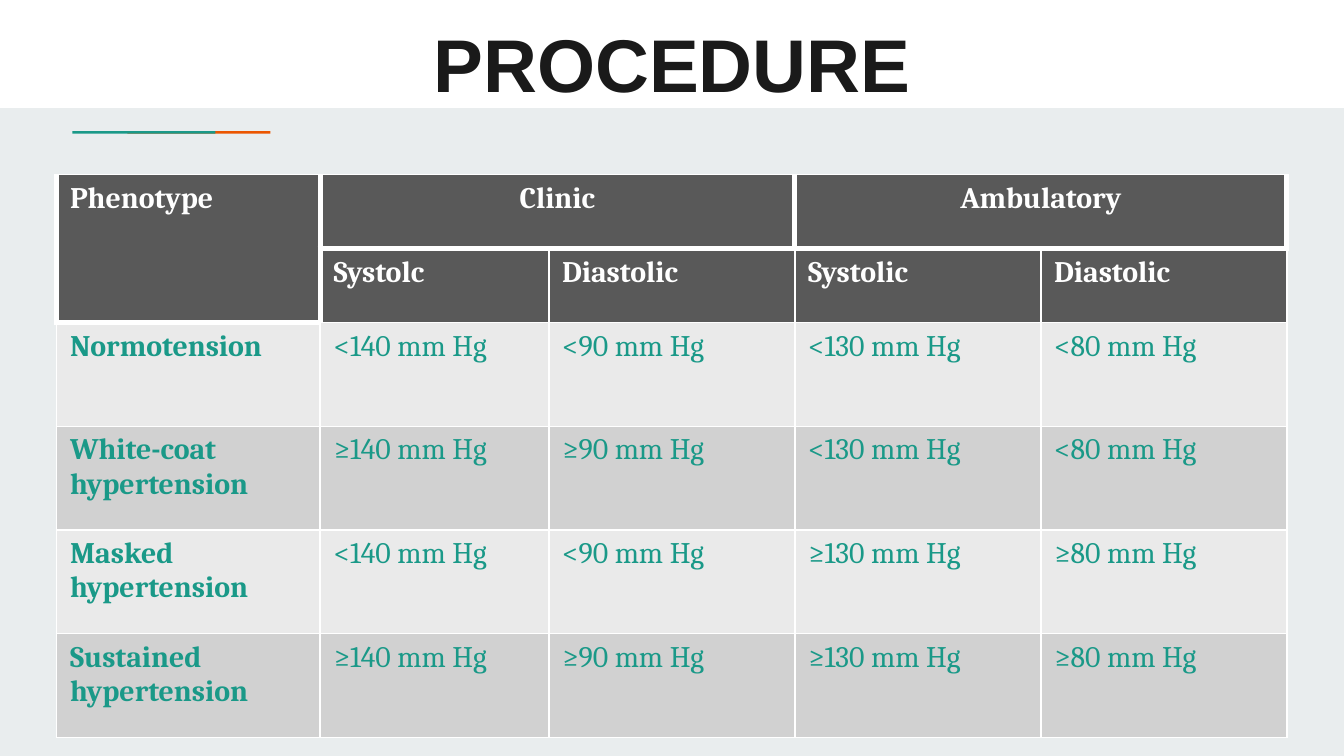
from dataclasses import dataclass

from pptx import Presentation
from pptx.dml.color import RGBColor as RGB
from pptx.enum.shapes import MSO_SHAPE as Kind
from pptx.enum.text import MSO_ANCHOR as Anchor, PP_ALIGN as Align
from pptx.oxml import parse_xml
from pptx.oxml.ns import nsdecls
from pptx.util import Cm, Pt


@dataclass(frozen=True)
class Theme:
    back: str = "E9EDEE"
    white: str = "FFFFFF"
    ink: str = "1A1A1A"
    teal: str = "1A9988"
    orange: str = "EB5600"
    head: str = "595959"
    bands: tuple = ("EAEAEA", "D1D1D1")
    title: int = 40
    cell: int = 16


theme = Theme()


def style(para, color, **form):
    for name, value in form.items():
        setattr(para.font, name, value)
    para.font.color.rgb = RGB.from_string(color)


def edge(cell, sides, width):
    for spot, side in enumerate(sides):
        line = parse_xml(
            f'<a:ln{side} {nsdecls("a")} w="{Pt(width)}"><a:solidFill>'
            f'<a:srgbClr val="{theme.white}"/></a:solidFill></a:ln{side}>')
        cell._tc.get_or_add_tcPr().insert(spot, line)


deck = Presentation()
deck.slide_width, deck.slide_height = Cm(25.4), Cm(14.29)
slide = deck.slides.add_slide(deck.slide_layouts[5])
slide.background.fill.solid()
slide.background.fill.fore_color.rgb = RGB.from_string(theme.back)

# Title band and accent bars
bars = [
    (0, 0, 25.4, 2.04, theme.white),
    (2.41, 2.48, 2.7, 0.05, theme.orange),
    (1.37, 2.48, 2.7, 0.05, theme.teal),
]
for *box, color in bars:
    bar = slide.shapes.add_shape(Kind.RECTANGLE, *map(Cm, box))
    bar.shadow.inherit = False
    bar.fill.solid()
    bar.fill.fore_color.rgb = RGB.from_string(color)
    bar.line.fill.background()

# Title, brought in front of the band
title = slide.shapes.title
slide.shapes._spTree.append(title._element)
place = dict(left=0.8, top=0, width=21.36, height=2.29)
place["left"] = (25.4 - place["width"]) / 2
for name, value in place.items():
    setattr(title, name, Cm(value))
frame = title.text_frame
frame.text = "PROCEDURE"
frame.vertical_anchor = Anchor.BOTTOM
for side in ("left", "right", "top", "bottom"):
    setattr(frame, f"margin_{side}", Cm(0.25))
frame.paragraphs[0].alignment = Align.CENTER
style(frame.paragraphs[0], theme.ink, name="Arial", size=Pt(theme.title), bold=True)

# Table of phenotypes
rows = [
    ("Phenotype", "Clinic", "", "Ambulatory", ""),
    ("", "Systolc", "Diastolic", "Systolic", "Diastolic"),
    ("Normotension", "<140", "<90", "<130", "<80"),
    ("White-coat hypertension", "≥140", "≥90", "<130", "<80"),
    ("Masked hypertension", "<140", "<90", "≥130", "≥80"),
    ("Sustained hypertension", "≥140", "≥90", "≥130", "≥80"),
]
wide = [4.98, 4.32, 4.65, 4.65, 4.65]
tall = [1.4] * 2 + [1.96] * 4
table = slide.shapes.add_table(
    len(rows), len(wide), Cm(1.07), Cm(3.3), Cm(sum(wide)), Cm(sum(tall))).table
table.first_row = table.horz_banding = False
for col, size in zip(table.columns, wide):
    col.width = Cm(size)
for row, size in zip(table.rows, tall):
    row.height = Cm(size)

for r, row in enumerate(rows):
    head = r < 2
    for c, text in enumerate(row):
        cell = table.cell(r, c)
        cell.fill.solid()
        cell.fill.fore_color.rgb = RGB.from_string(
            theme.head if head else theme.bands[r % 2])
        thick = r == 0 or (r == 1 and c == 0)
        edge(cell, "LRB", 3 if thick else 1)
        if r == 0:
            cell._tc.tcPr.insert(2, parse_xml(
                f'<a:lnT {nsdecls("a")} w="{Pt(1)}"><a:solidFill>'
                f'<a:srgbClr val="{theme.white}"/></a:solidFill></a:lnT>'))
        if not text:
            continue
        cell.text = text if head or c == 0 else f"{text} mm Hg"
        para = cell.text_frame.paragraphs[0]
        para.alignment = Align.CENTER if r == 0 and c else Align.LEFT
        style(para, theme.white if head else theme.teal, name="Cambria",
              size=Pt(theme.cell), bold=head or c == 0)

# Merged headings
for start, end in [((0, 0), (1, 0)), ((0, 1), (0, 2)), ((0, 3), (0, 4))]:
    table.cell(*start).merge(table.cell(*end))

deck.save("out.pptx")
